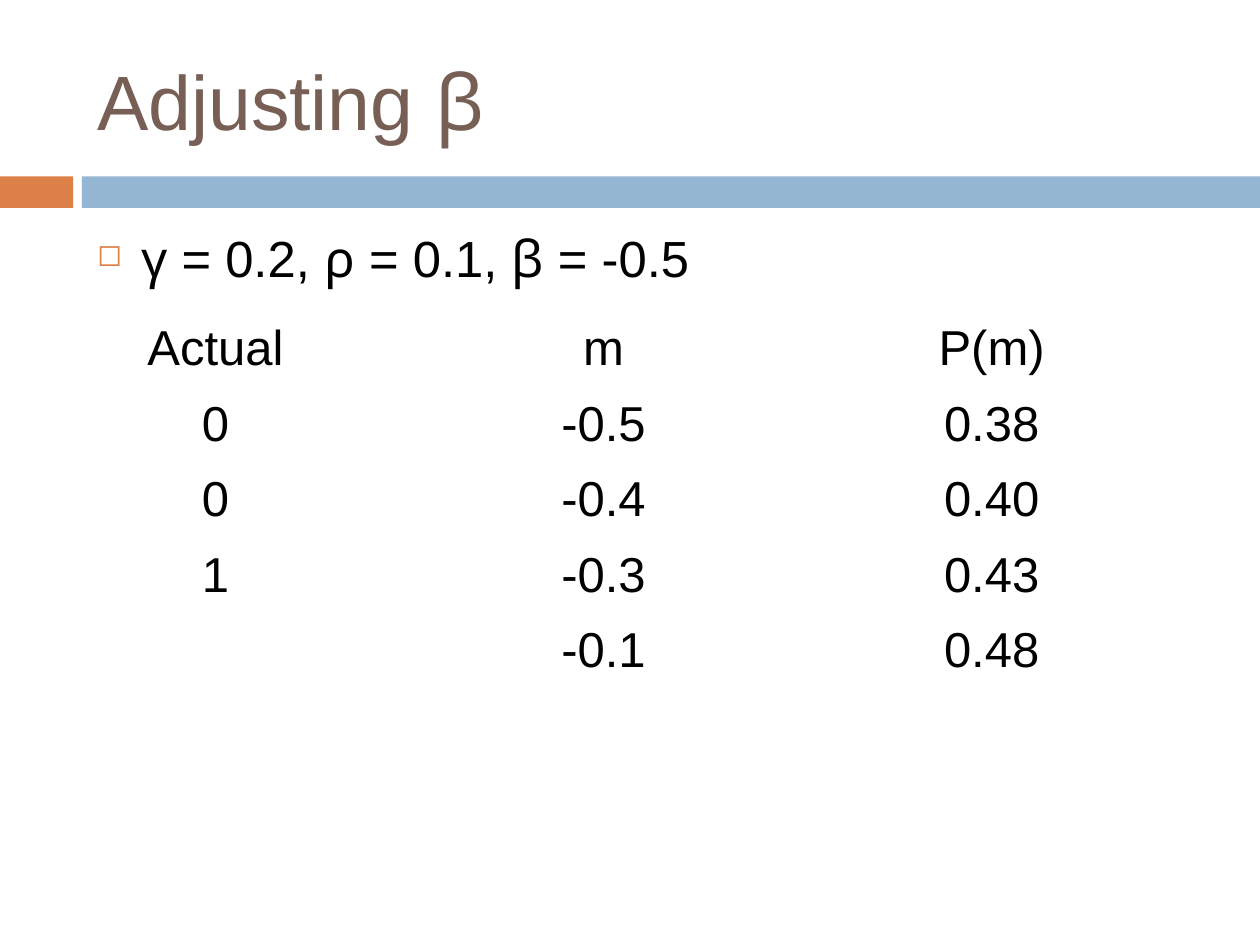
import pptx
import pptx.util
import pptx.dml.color
import pptx.enum.shapes
import pptx.enum.text
import pptx.oxml
import pptx.oxml.ns

Inches, Pt = pptx.util.Inches, pptx.util.Pt
RGBColor = pptx.dml.color.RGBColor
PP_ALIGN = pptx.enum.text.PP_ALIGN
MSO_ANCHOR = pptx.enum.text.MSO_ANCHOR

COLORS = {"orange": "DD8047", "blue": "94B6D2", "brown": "775F55", "black": "000000"}
LATIN, GREEK = "Arial", "Noto Sans"


def rgb(name):
    return RGBColor.from_string(COLORS[name])


def write_mixed(placeholder, parts, size, color, anchor):
    """Fill the first paragraph, setting Greek letters in their own font."""
    frame = placeholder.text_frame
    frame.word_wrap = True
    frame.auto_size = pptx.enum.text.MSO_AUTO_SIZE.NONE
    frame.vertical_anchor = anchor
    paragraph = frame.paragraphs[0]
    paragraph.alignment = PP_ALIGN.LEFT
    paragraph.space_before = Pt(0)
    for part in parts:
        run = paragraph.add_run()
        run.text = part
        run.font.name = GREEK if part in "βγρ" else LATIN
        run.font.size = Pt(size)
        run.font.color.rgb = rgb(color)
    return paragraph


prs = pptx.Presentation()
prs.slide_width, prs.slide_height = Inches(10), Inches(7.5)
slide = prs.slides.add_slide(prs.slide_layouts[1])
title, parameters = slide.placeholders

# Band below the title
for left, width, color in [(0, 0.58, "orange"), (0.65, 9.35, "blue")]:
    band = slide.shapes.add_shape(
        pptx.enum.shapes.MSO_SHAPE.RECTANGLE,
        Inches(left), Inches(1.4), Inches(width), Inches(0.25))
    band.shadow.inherit = False
    band.fill.solid()
    band.fill.fore_color.rgb = rgb(color)
    band.line.fill.background()

# Title and parameter line
for placeholder, top, height in [(title, 0.25, 1.08), (parameters, 1.75, 4.92)]:
    placeholder.left, placeholder.top = Inches(0.67), Inches(top)
    placeholder.width, placeholder.height = Inches(8.92), Inches(height)

write_mixed(title, ["Adjusting ", "β"], 44, "brown", MSO_ANCHOR.MIDDLE)
settings = write_mixed(
    parameters, ["γ", " = 0.2, ", "ρ", " = 0.1, ", "β", " = -0.5"],
    29, "black", MSO_ANCHOR.TOP)

properties = settings._p.get_or_add_pPr()
properties.set("marL", str(Inches(0.35)))
properties.set("indent", str(-Inches(0.35)))
namespace = pptx.oxml.ns.nsdecls("a")
for bullet in [
    f'<a:buClr {namespace}><a:srgbClr val="{COLORS["orange"]}"/></a:buClr>',
    f'<a:buSzPct {namespace} val="60000"/>',
    f'<a:buFont {namespace} typeface="OpenSymbol"/>',
    f'<a:buChar {namespace} char="◻"/>',
]:
    properties.append(pptx.oxml.parse_xml(bullet))

# Predictions, followed by empty rows
predictions = [
    ("Actual", "m", "P(m)"),
    ("0", "-0.5", "0.38"),
    ("0", "-0.4", "0.40"),
    ("1", "-0.3", "0.43"),
    ("", "-0.1", "0.48"),
]
row_count, column_count = 8, 3
column_width, row_height = Inches(3.08), Inches(0.6)
table = slide.shapes.add_table(
    row_count, column_count, Inches(0.17), Inches(2.5),
    column_width * column_count, row_height * row_count).table
table.first_row = table.horz_banding = False
style = table._tbl.tblPr.find(pptx.oxml.ns.qn("a:tableStyleId"))
style.text = "{2D5ABB26-0587-4C30-8999-92F81FD0307C}"  # no style, no grid

for cell in table.iter_cells():
    cell.fill.background()

for row, values in enumerate(predictions):
    for column, value in enumerate(values):
        cell = table.cell(row, column)
        cell.text = value
        paragraph = cell.text_frame.paragraphs[0]
        paragraph.alignment = PP_ALIGN.CENTER
        paragraph.font.name = LATIN
        paragraph.font.size = Pt(28)
        paragraph.font.color.rgb = rgb("black")

prs.save("out.pptx")
